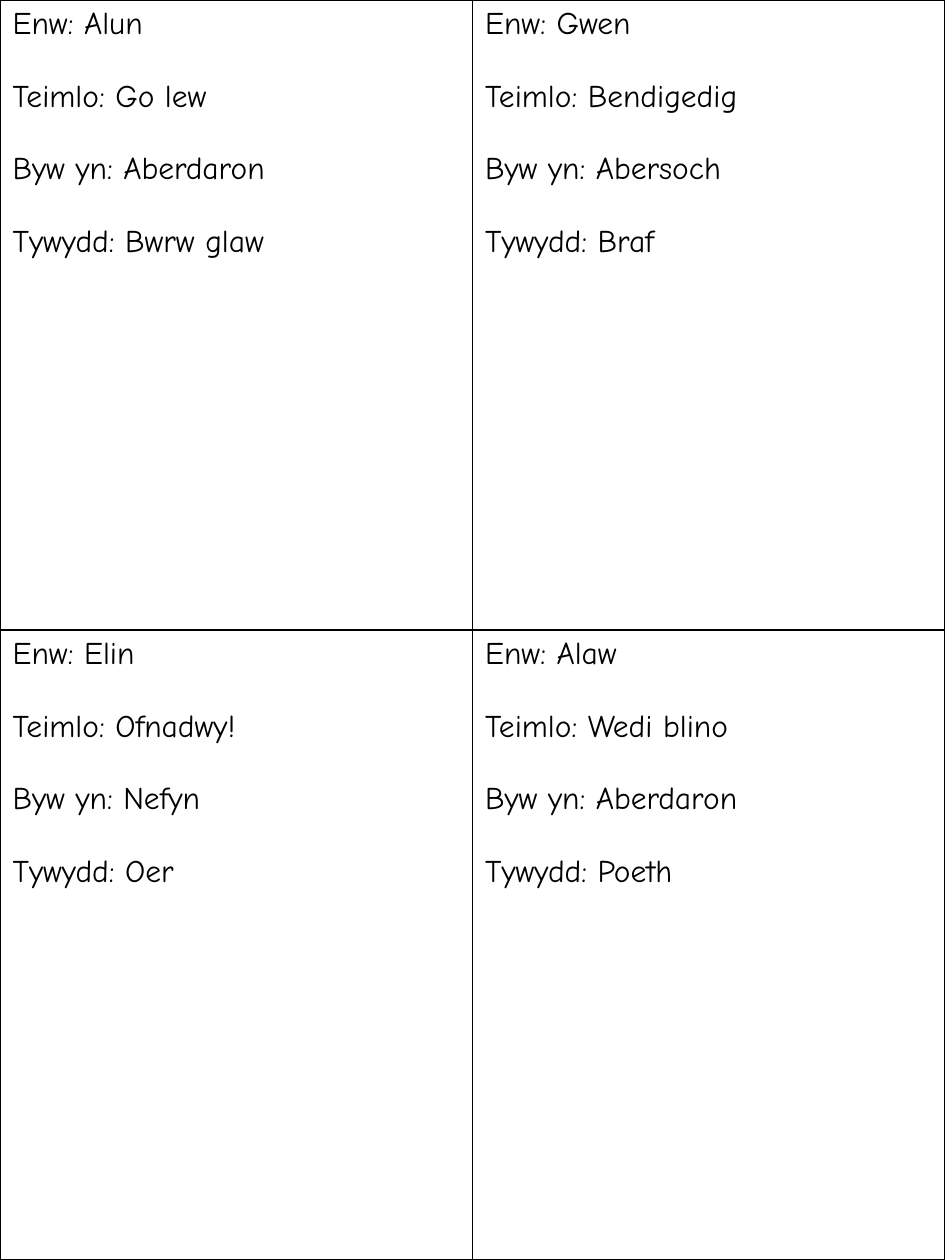
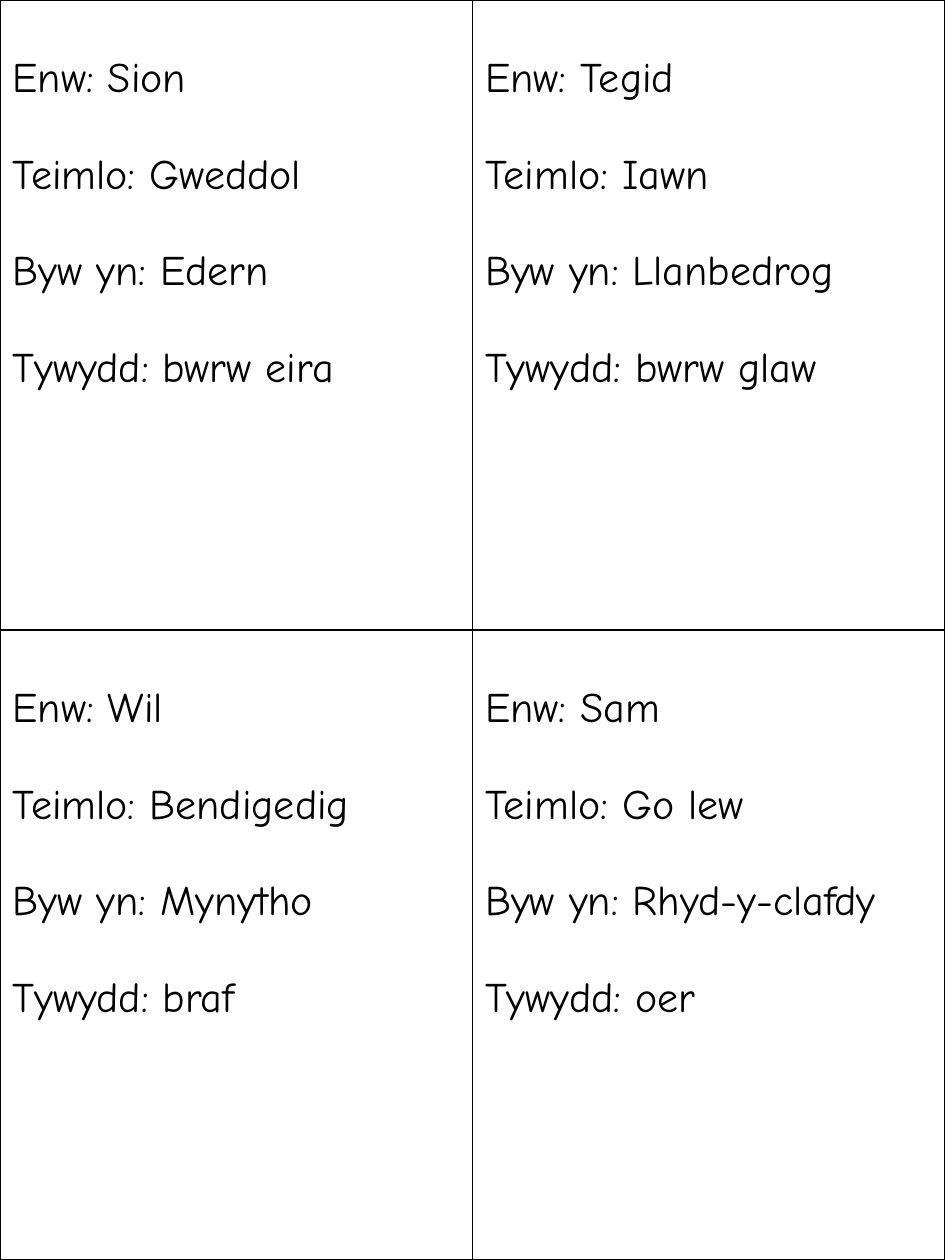
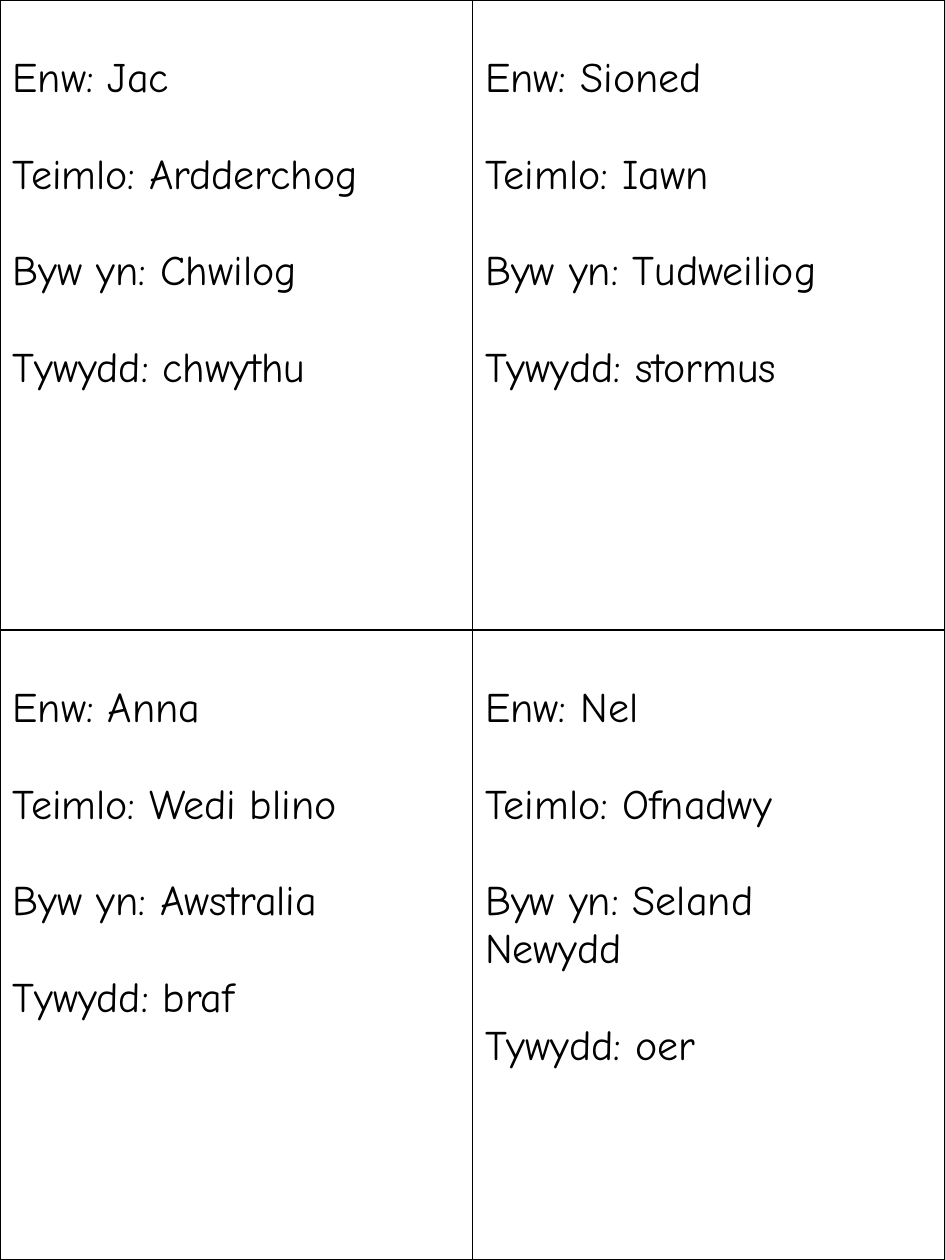
import pptx
import pptx.dml.color
import pptx.oxml
import pptx.oxml.ns
import pptx.util
from pptx.util import Inches

BLACK = pptx.dml.color.RGBColor(0x00, 0x00, 0x00)
FONT = "Comic Neue"
PAGE_WIDTH, PAGE_HEIGHT = 7.5, 10
MARGIN_TOP = 0.05
LINE_HEIGHT = 1.15  # of the font size
LABELS = ("Enw", "Teimlo", "Byw yn", "Tywydd")

# Each page: font size, blank lines above the text, two rows of two people
PAGES = [
    (18, 0, [
        [("Alun", "Go lew", "Aberdaron", "Bwrw glaw"),
         ("Gwen", "Bendigedig", "Abersoch", "Braf")],
        [("Elin", "Ofnadwy!", "Nefyn", "Oer"),
         ("Alaw", "Wedi blino", "Aberdaron", "Poeth")],
    ]),
    (24, 1, [
        [("Sion", "Gweddol", "Edern", "bwrw eira"),
         ("Tegid", "Iawn", "Llanbedrog", "bwrw glaw")],
        [("Wil", "Bendigedig", "Mynytho", "braf"),
         ("Sam", "Go lew", "Rhyd-y-clafdy", "oer")],
    ]),
    (24, 1, [
        [("Jac", "Ardderchog", "Chwilog", "chwythu"),
         ("Sioned", "Iawn", "Tudweiliog", "stormus")],
        [("Anna", "Wedi blino", "Awstralia", "braf"),
         ("Nel", "Ofnadwy", "Seland\vNewydd", "oer")],
    ]),
]


def write_text(frame, lines, *, size, gap, color=BLACK, font=FONT):
    """Write one paragraph per line, with a gap in points between them."""
    for index, line in enumerate(lines):
        para = frame.add_paragraph() if index else frame.paragraphs[0]
        para.text = line
        para.space_before = pptx.util.Pt(gap if index else 0)
        for span in para.runs:
            span.font.name = font
            span.font.size = pptx.util.Pt(size)
            span.font.color.rgb = color


def draw_borders(cell, color=BLACK, width=1):
    properties = cell._tc.get_or_add_tcPr()
    for side in ("lnL", "lnR", "lnT", "lnB"):
        properties.append(pptx.oxml.parse_xml(
            f'<a:{side} {pptx.oxml.ns.nsdecls("a")} w="{pptx.util.Pt(width)}">'
            f'<a:solidFill><a:srgbClr val="{color}"/></a:solidFill></a:{side}>'))


def fill_card(cell, person, size, blank_lines):
    """One person's card: a labelled answer on every line."""
    line_points = size * LINE_HEIGHT
    draw_borders(cell)
    cell.fill.background()
    cell.margin_top = Inches(MARGIN_TOP) + pptx.util.Pt(blank_lines * line_points)
    lines = [f"{label}: {answer}" for label, answer in zip(LABELS, person)]
    write_text(cell.text_frame, lines, size=size, gap=line_points)


def add_card_page(deck, size, blank_lines, people):
    """A page split into a grid of equal cards."""
    page = deck.slides.add_slide(deck.slide_layouts[6])
    cards = page.shapes.add_table(
        len(people), len(people[0]), Inches(0), Inches(0),
        Inches(PAGE_WIDTH), Inches(PAGE_HEIGHT)).table
    cards.first_row = False
    cards.horz_banding = False
    for row, row_people in enumerate(people):
        for column, person in enumerate(row_people):
            fill_card(cards.cell(row, column), person, size, blank_lines)


def main():
    deck = pptx.Presentation()
    deck.slide_width = Inches(PAGE_WIDTH)
    deck.slide_height = Inches(PAGE_HEIGHT)
    for size, blank_lines, people in PAGES:
        add_card_page(deck, size, blank_lines, people)
    deck.save("out.pptx")


if __name__ == "__main__":
    main()
